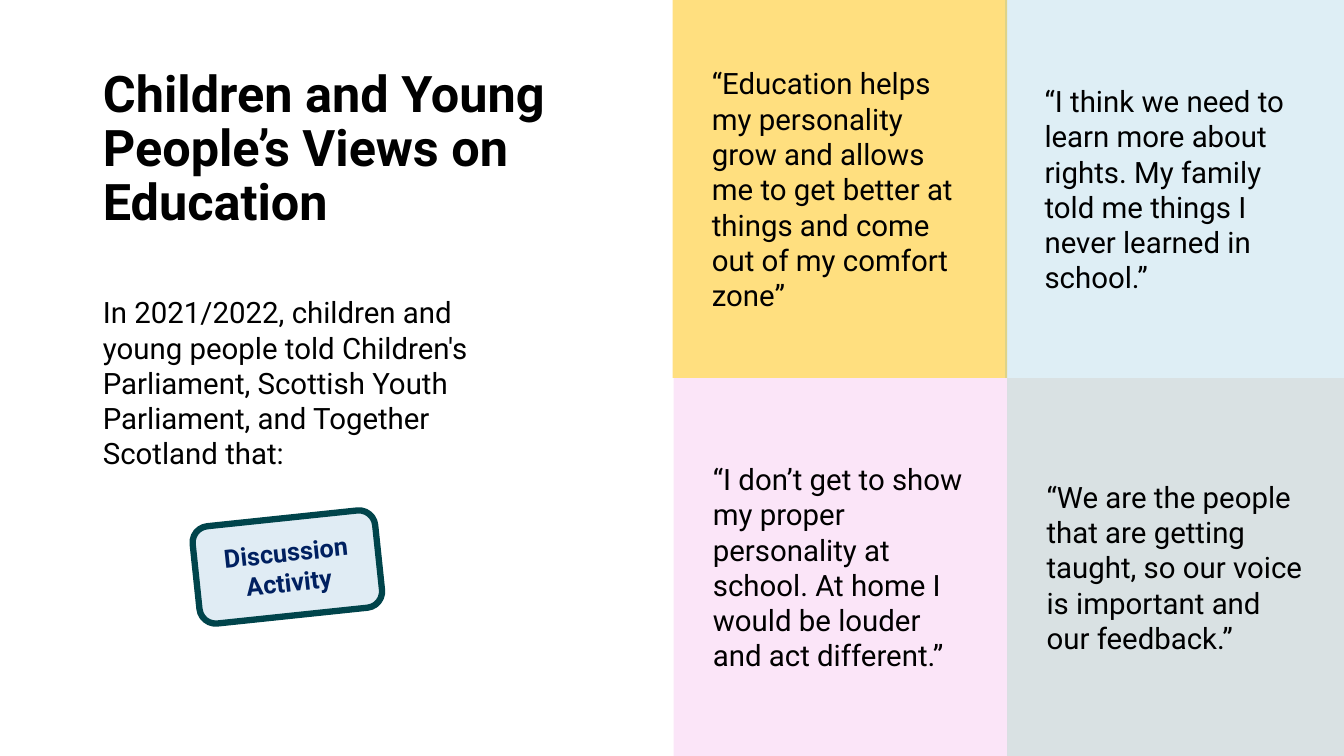
from lxml import etree
from pptx import Presentation
from pptx.dml.color import RGBColor
from pptx.enum import shapes, text
from pptx.oxml import ns
from pptx.util import Inches, Pt

BLACK = RGBColor(0x00, 0x00, 0x00)
NAVY = RGBColor(0x00, 0x20, 0x60)
TEAL = RGBColor(0x00, 0x44, 0x4B)
PALE_BLUE = RGBColor(0xE0, 0xEC, 0xF4)
AMBER = RGBColor(0xFF, 0xC0, 0x00)
PINK = RGBColor(0xF8, 0xCD, 0xF2)
BLUE = RGBColor(0x26, 0x8F, 0xC0)
DARK_TEAL = RGBColor(0x00, 0x3B, 0x49)


def write(box, words, size, color, bold=False, align=text.PP_ALIGN.LEFT,
          anchor=text.MSO_ANCHOR.TOP):
    frame = box.text_frame
    frame.word_wrap = True
    frame.auto_size = text.MSO_AUTO_SIZE.NONE
    frame.vertical_anchor = anchor
    para = frame.paragraphs[0]
    para.alignment = align
    para.space_before = Pt(0)
    span = para.add_run()
    span.text = words
    span.font.name = "Roboto"
    span.font.size = Pt(size)
    span.font.bold = bold
    span.font.color.rgb = color
    return para


def add_panel(kind, left, top, width, height, color):
    box = page.shapes.add_shape(
        kind, Inches(left), Inches(top), Inches(width), Inches(height))
    box.shadow.inherit = False
    box.fill.solid()
    box.fill.fore_color.rgb = color
    box.line.fill.background()
    return box


deck = Presentation()
deck.slide_width = Inches(13.33)
deck.slide_height = Inches(7.5)
page = deck.slides.add_slide(deck.slide_layouts[1])

title = page.shapes.title
title.left, title.top = Inches(0.92), Inches(0.63)
title.width, title.height = Inches(4.85), Inches(1.22)
heading = write(title, "Children and Young People’s Views on Education", 36, BLACK, bold=True)
heading.line_spacing = 0.9

body = page.placeholders[1]
body.left, body.top = Inches(0.92), Inches(2.87)
body.width, body.height = Inches(3.88), Inches(4)
intro = write(
    body,
    "In 2021/2022, children and young people told Children's Parliament, "
    "Scottish Youth Parliament, and Together Scotland that:", 21, BLACK)
intro_format = intro._p.get_or_add_pPr()
intro_format.set("marL", "0")
intro_format.set("indent", "0")
etree.SubElement(intro_format, ns.qn("a:buNone"))

badge = add_panel(shapes.MSO_SHAPE.ROUNDED_RECTANGLE, 1.94, 5.14, 1.82, 0.97, PALE_BLUE)
badge.rotation = 354
badge.line.color.rgb = TEAL
badge.line.width = Pt(4.5)
write(badge, "Discussion Activity", 18, NAVY, bold=True,
      align=text.PP_ALIGN.CENTER, anchor=text.MSO_ANCHOR.MIDDLE)

ROW_HEIGHT = 3.75
quotes = [
    (6.67, 0, 3.32, AMBER, 50,
     "“Education helps my personality grow and allows me to get better at "
     "things and come out of my comfort zone”"),
    (9.99, 1, 3.36, DARK_TEAL, 15,
     "“We are the people that are getting taught, so our voice is important "
     "and our feedback.”"),
    (6.68, 1, 3.31, PINK, 50,
     "“I don’t get to show my proper personality at school. At home I would "
     "be louder and act different.”"),
    (9.97, 0, 3.36, BLUE, 15,
     "“I think we need to learn more about rights. My family told me things "
     "I never learned in school.”"),
]
for left, row, width, color, opacity, words in quotes:
    panel = add_panel(shapes.MSO_SHAPE.RECTANGLE, left, row * ROW_HEIGHT,
                      width, ROW_HEIGHT, color)
    tint = panel._element.spPr.find(ns.qn("a:solidFill"))[0]
    etree.SubElement(tint, ns.qn("a:alpha")).set("val", str(opacity * 1000))
    frame = panel.text_frame
    frame.margin_left = frame.margin_right = Inches(0.39)
    frame.margin_top = frame.margin_bottom = Inches(0.39)
    write(panel, words, 21, BLACK, anchor=text.MSO_ANCHOR.MIDDLE)

deck.save("out.pptx")
